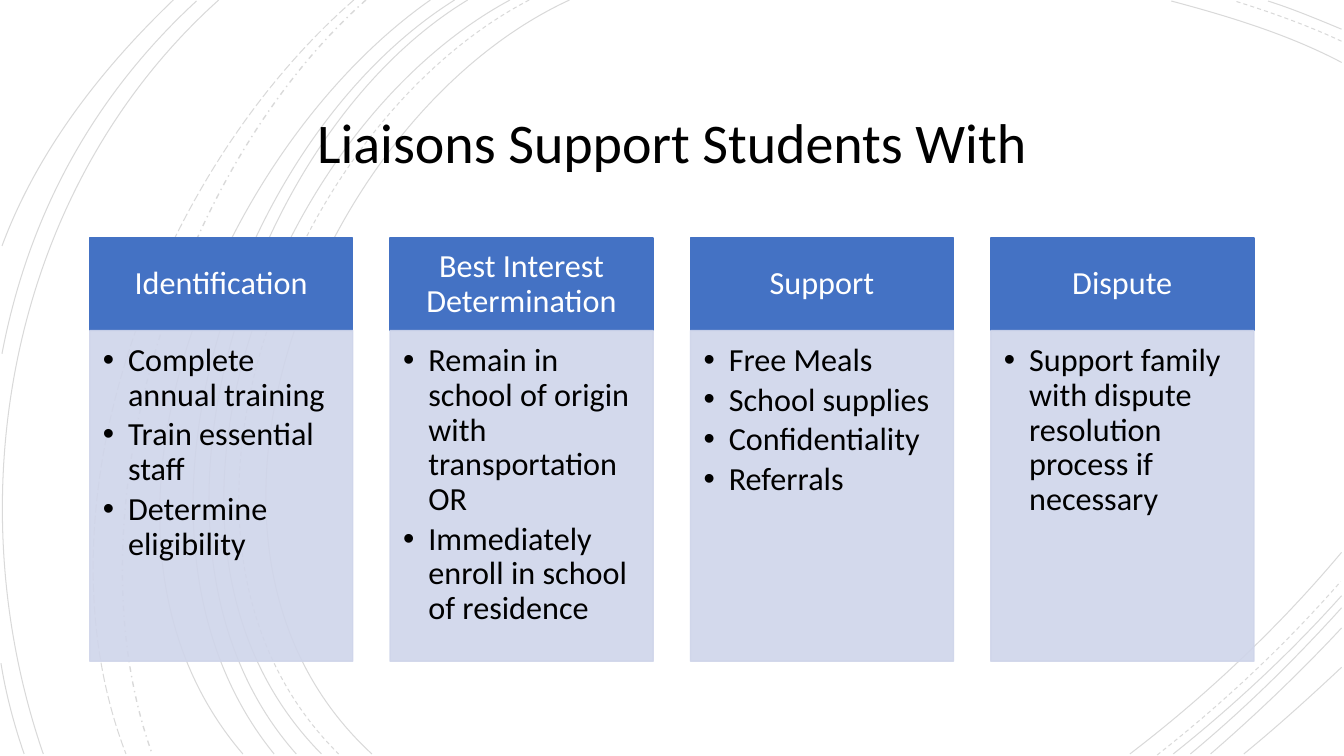
from lxml.etree import SubElement
from pptx import Presentation
from pptx.dml.color import RGBColor
from pptx.enum.dml import MSO_LINE as Dash
from pptx.enum.shapes import MSO_SHAPE as Shape
from pptx.enum.text import MSO_ANCHOR as Anchor, PP_ALIGN as Align
from pptx.oxml.ns import qn
from pptx.util import Pt

PX = 9144  # 100 px to the inch
FONT = "Calibri"
COLORS = {"ink": "000000", "white": "FFFFFF", "head": "4472C4", "body": "CFD5EA"}

# Cubic curves: start, two controls, end
ARCS = [
    (Dash.SOLID, 0.75, [
        (565, 0, 315, 115, 143, 540, 369, 748),
        (1331, 62, 1278, 34, 1218, 16, 1162, 1),
        (1121, 748, 1197, 690, 1269, 622, 1331, 548),
        (506, 0, 270, 127, 110, 537, 319, 748),
        (1331, 29, 1307, 19, 1283, 9, 1258, 1),
        (1164, 748, 1223, 701, 1280, 648, 1331, 591),
        (464, 0, 244, 133, 110, 541, 294, 748),
        (1181, 748, 1234, 704, 1284, 655, 1331, 603),
        (451, 0, 231, 138, 97, 533, 272, 748),
        (1201, 748, 1246, 709, 1290, 667, 1331, 623),
        (427, 0, 217, 147, 53, 529, 241, 748),
        (1234, 748, 1267, 721, 1299, 692, 1331, 662),
        (217, 0, 11, 185, -46, 490, 43, 748),
        (195, 1, 92, 96, 28, 214, 2, 351),
        (1, 658, 6, 689, 14, 719, 24, 748),
        (172, 0, 100, 69, 37, 150, 2, 244),
    ]),
    (Dash.DASH, 0.75, [
        (525, 0, 285, 125, 123, 537, 336, 748),
        (1331, 41, 1297, 25, 1260, 12, 1225, 1),
        (1148, 749, 1213, 698, 1275, 640, 1330, 577),
    ]),
    (Dash.DASH_DOT, 1, [(363, 0, 176, 166, 65, 509, 151, 748)]),
    (Dash.LONG_DASH, 0.75, [(351, 0, 157, 169, 29, 499, 125, 748)]),
]

CARDS = [
    ("Identification",
     ["Complete annual training", "Train essential staff", "Determine eligibility"]),
    ("Best Interest Determination",
     ["Remain in school of origin with transportation OR",
      "Immediately enroll in school of residence"]),
    ("Support", ["Free Meals", "School supplies", "Confidentiality", "Referrals"]),
    ("Dispute", ["Support family with dispute resolution process if necessary"]),
]


def emu(*vals):
    return [round(v * PX) for v in vals]


def tint(fmt, color, alpha=100):
    """Colour a solid fill and set its opacity in percent."""
    fmt.solid()
    fmt.fore_color.rgb = RGBColor.from_string(COLORS[color])
    if alpha < 100:
        rgb = fmt._xPr.find(".//" + qn("a:srgbClr"))
        SubElement(rgb, qn("a:alpha"), val=str(alpha * 1000))


def bullet(para, indent):
    props = para._p.get_or_add_pPr()
    props.set("marL", str(indent * PX))
    props.set("indent", str(-indent * PX))
    SubElement(props, qn("a:buFont"), typeface="Arial")
    SubElement(props, qn("a:buChar"), char="•")


def write(shape, lines, size, color, pads, align, anchor, dots=False):
    frame = shape.text_frame
    frame.word_wrap = True
    frame.vertical_anchor = anchor
    (frame.margin_left, frame.margin_top,
     frame.margin_right, frame.margin_bottom) = emu(*pads)
    for i, line in enumerate(lines):
        para = frame.add_paragraph() if i else frame.paragraphs[0]
        para.alignment = align
        para.line_spacing = 0.9
        if dots:
            para.space_after = Pt(3.5)
            bullet(para, 25)
        run = para.add_run()
        run.text = line
        run.font.name = FONT
        run.font.size = Pt(size)
        run.font.color.rgb = RGBColor.from_string(COLORS[color])


def bend(arc):
    """Turn the three straight segments of an outline into one cubic curve."""
    outline = arc._element.find(".//" + qn("a:path"))
    curve = SubElement(outline, qn("a:cubicBezTo"))
    for seg in outline.findall(qn("a:lnTo")):
        curve.append(seg[0])
        outline.remove(seg)


def draw_arcs(slide, x, y):
    for dash, width, curves in ARCS:
        for curve in curves:
            start, *rest = [emu(x + a, y + b) for a, b in zip(curve[::2], curve[1::2])]
            pen = slide.shapes.build_freeform(*start)
            pen.add_line_segments(rest, close=False)
            arc = pen.convert_to_shape()
            bend(arc)
            arc.shadow.inherit = False
            arc.fill.background()
            tint(arc.line.fill, "ink", 15)
            arc.line.width = Pt(width)
            arc.line.dash_style = dash


def draw_title(slide, x, y, w, h):
    box = slide.shapes.add_textbox(*emu(x, y, w, h))
    write(box, ["Liaisons Support Students With"], 40, "ink",
          (10, 5, 10, 5), Align.CENTER, Anchor.MIDDLE)


def panel(slide, x, y, w, h, color, alpha=100):
    rect = slide.shapes.add_shape(Shape.RECTANGLE, *emu(x, y, w, h))
    rect.shadow.inherit = False
    tint(rect.fill, color, alpha)
    tint(rect.line.fill, color, alpha)
    rect.line.width = Pt(1)
    return rect


def draw_card(slide, x, y, w, h, head, items):
    top = 92
    write(panel(slide, x, y, w, top, "head"), [head], 23, "white",
          (18, 10, 18, 10), Align.CENTER, Anchor.MIDDLE)
    write(panel(slide, x, y + top, w, h - top, "body", 90), items, 23, "ink",
          (13, 13, 18, 20), Align.LEFT, Anchor.TOP, dots=True)


def draw_cards(slide, x, y, w, h):
    gap = 37
    wide = (w - gap * (len(CARDS) - 1)) / len(CARDS)
    for i, (head, items) in enumerate(CARDS):
        draw_card(slide, x + i * (wide + gap), y, wide, h, head, items)


def main():
    deck = Presentation()
    deck.slide_width, deck.slide_height = emu(4000 / 3, 750)
    slide = deck.slides.add_slide(deck.slide_layouts[6])
    draw_arcs(slide, 0, 0)
    draw_title(slide, 192, 87, 949, 115)
    draw_cards(slide, 89, 236, 1155, 420)
    deck.save("out.pptx")


if __name__ == "__main__":
    main()
